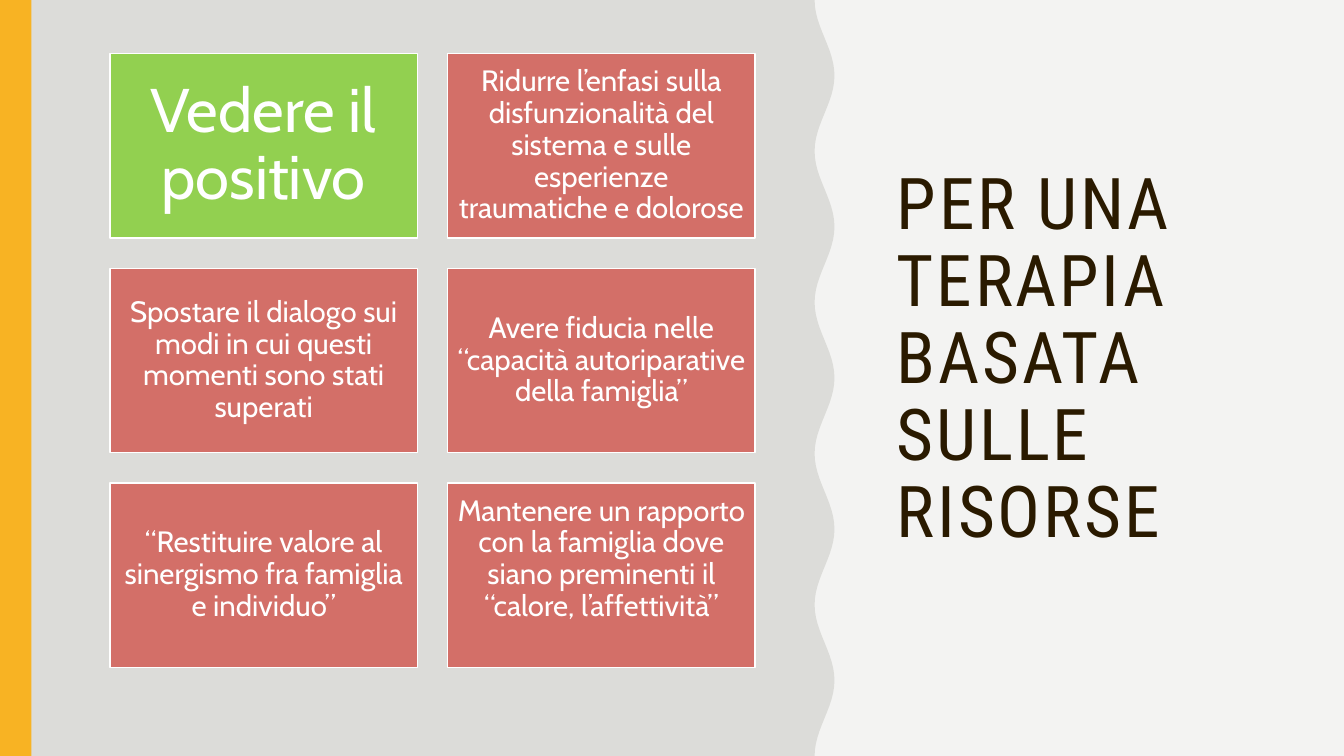
import math
from dataclasses import dataclass

import pptx
import pptx.dml.color
import pptx.enum.shapes
import pptx.enum.text
import pptx.slide
import pptx.text.text
import pptx.util

Cm = pptx.util.Cm


@dataclass(frozen=True)
class Theme:
    background: str = "F3F3F2"
    panel: str = "DCDCD9"
    bar: str = "F8B323"
    title: str = "2A1A00"
    highlight: str = "92D050"
    card: str = "D36F68"
    light: str = "FFFFFF"
    title_font: str = "Roboto Condensed"
    card_font: str = "Cabin"
    title_size: float = 51
    highlight_size: float = 44
    card_size: float = 21
    line_spacing: float = 0.9


@dataclass(frozen=True)
class Card:
    text: str
    fill: str
    size: float
    inset: float = 0.23
    extra_bottom: float = 0


THEME = Theme()
WIDTH, HEIGHT = 33.87, 19.05

# Cards, row by row
CARDS = [
    Card("Vedere il positivo", THEME.highlight, THEME.highlight_size, inset=0.46),
    Card("Ridurre l’enfasi sulla disfunzionalità del sistema e sulle esperienze "
         "traumatiche e dolorose", THEME.card, THEME.card_size),
    Card("Spostare il dialogo sui modi in cui questi momenti sono stati superati",
         THEME.card, THEME.card_size),
    Card("Avere fiducia nelle “capacità autoriparative della famiglia”",
         THEME.card, THEME.card_size),
    Card("“Restituire valore al sinergismo fra famiglia e individuo”",
         THEME.card, THEME.card_size),
    Card("Mantenere un rapporto con la famiglia dove siano preminenti il "
         "“calore, l’affettività”", THEME.card, THEME.card_size, extra_bottom=0.8),
]
COLUMNS = 2
CARD_LEFT, CARD_TOP = 2.77, 1.35
CARD_WIDTH, CARD_HEIGHT = 7.75, 4.65
CARD_GAP = 0.76

# Wavy edge of the panel
WAVES, STEPS = 5, 24
WAVE_MIDDLE, WAVE_DEPTH = 20.78, 0.25


def colour(value: str) -> pptx.dml.color.RGBColor:
    return pptx.dml.color.RGBColor.from_string(value)


def paint(shape, fill: str, line: str | None = None) -> None:
    shape.shadow.inherit = False
    shape.fill.solid()
    shape.fill.fore_color.rgb = colour(fill)
    if line is None:
        shape.line.fill.background()
    else:
        shape.line.color.rgb = colour(line)
        shape.line.width = pptx.util.Pt(1)


def write(frame: pptx.text.text.TextFrame, text: str, font: str, size: float,
          ink: str, align: pptx.enum.text.PP_ALIGN) -> pptx.text.text._Run:
    frame.word_wrap = True
    frame.auto_size = pptx.enum.text.MSO_AUTO_SIZE.NONE
    frame.vertical_anchor = pptx.enum.text.MSO_ANCHOR.MIDDLE
    para = frame.paragraphs[0]
    para.alignment = align
    para.line_spacing = THEME.line_spacing
    span = para.add_run()
    span.text = text
    span.font.name = font
    span.font.size = pptx.util.Pt(size)
    span.font.color.rgb = colour(ink)
    return span


def add_box(page: pptx.slide.Slide, left: float, top: float, width: float,
            height: float, fill: str, line: str | None = None):
    box = page.shapes.add_shape(pptx.enum.shapes.MSO_SHAPE.RECTANGLE,
                                Cm(left), Cm(top), Cm(width), Cm(height))
    paint(box, fill, line)
    return box


def add_wavy_panel(page: pptx.slide.Slide) -> None:
    edge = []
    for step in range(WAVES * STEPS + 1):
        x = WAVE_MIDDLE - WAVE_DEPTH * math.cos(2 * math.pi * step / STEPS)
        edge.append((Cm(x), Cm(HEIGHT * step / (WAVES * STEPS))))
    outline = page.shapes.build_freeform(0, 0)
    outline.add_line_segments(edge + [(0, Cm(HEIGHT))], close=True)
    paint(outline.convert_to_shape(), THEME.panel)


def add_title(page: pptx.slide.Slide, text: str) -> None:
    title = page.shapes.title
    title.left, title.top = Cm(22.35), Cm(CARD_TOP)
    title.width, title.height = Cm(10.16), Cm(15.47)
    span = write(title.text_frame, text, THEME.title_font, THEME.title_size,
                 THEME.title, pptx.enum.text.PP_ALIGN.LEFT)
    span._r.get_or_add_rPr().set("spc", "200")


def add_card(page: pptx.slide.Slide, index: int, card: Card) -> None:
    row, column = divmod(index, COLUMNS)
    box = add_box(page, CARD_LEFT + column * (CARD_WIDTH + CARD_GAP),
                  CARD_TOP + row * (CARD_HEIGHT + CARD_GAP),
                  CARD_WIDTH, CARD_HEIGHT, card.fill, THEME.light)
    frame = box.text_frame
    frame.margin_left = frame.margin_right = frame.margin_top = Cm(card.inset)
    frame.margin_bottom = Cm(card.inset + card.extra_bottom)
    write(frame, card.text, THEME.card_font, card.size, THEME.light,
          pptx.enum.text.PP_ALIGN.CENTER)


def main() -> None:
    deck = pptx.Presentation()
    deck.slide_width, deck.slide_height = Cm(WIDTH), Cm(HEIGHT)
    page = deck.slides.add_slide(deck.slide_layouts.get_by_name("Title Only"))

    # Backdrop
    page.background.fill.solid()
    page.background.fill.fore_color.rgb = colour(THEME.background)
    add_wavy_panel(page)
    add_box(page, 0, 0, 0.79, HEIGHT, THEME.bar)

    # Content
    add_title(page, "PER UNA TERAPIA BASATA SULLE RISORSE")
    for index, card in enumerate(CARDS):
        add_card(page, index, card)

    deck.save("out.pptx")


if __name__ == "__main__":
    main()
